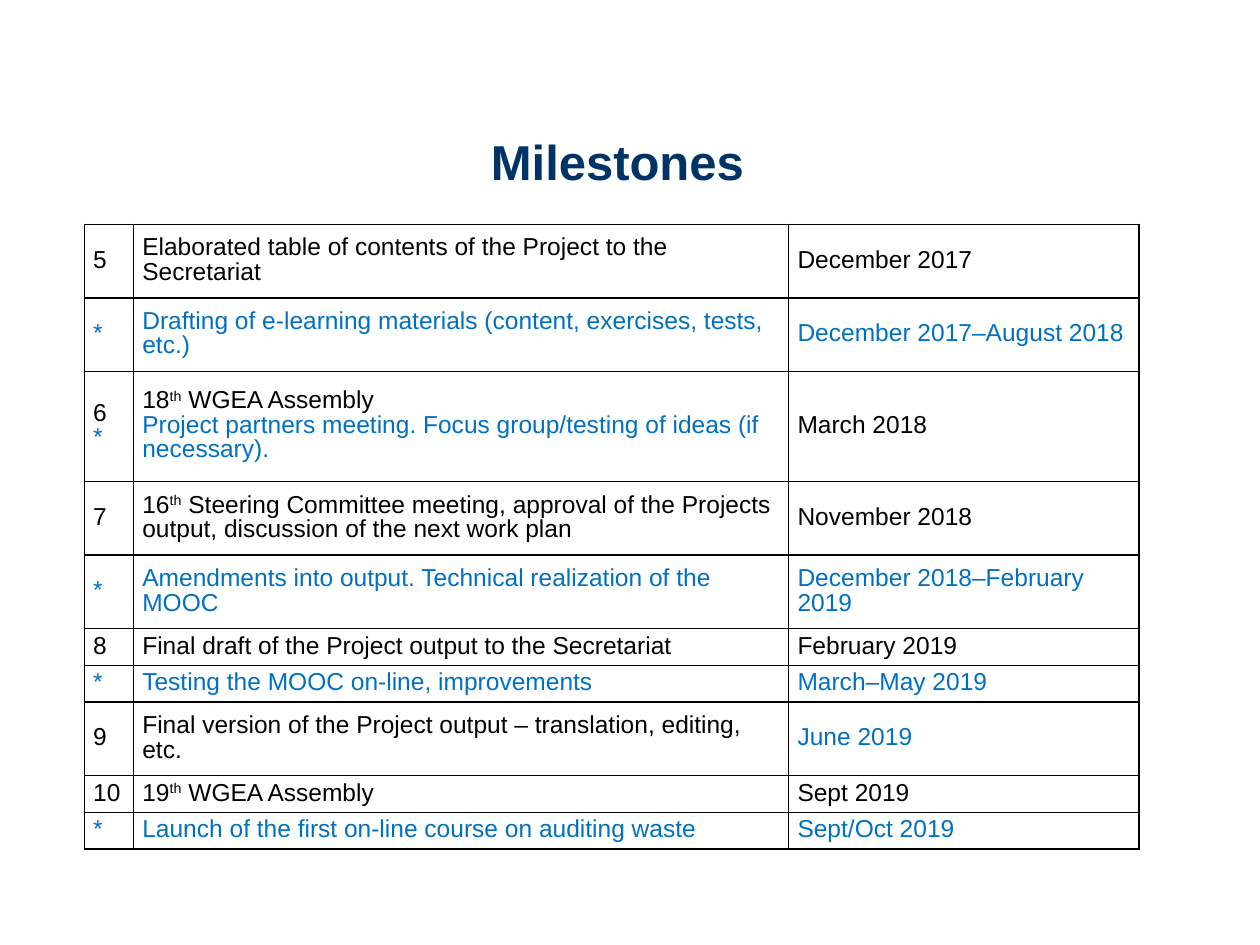
import pptx
import pptx.dml.color
import pptx.enum.text
import pptx.oxml
import pptx.oxml.ns
import pptx.util

FONT = "Arial"
NAVY, BLACK, BLUE = "003366", "000000", "0070C0"
COLUMN_WIDTHS = [0.39, 5.2, 2.78]
GRID_LEFT, GRID_TOP, GRID_HEIGHT = 0.67, 1.78, 4.96


def plan(text, *more):
    return [(BLACK, text, *more)]


def mooc(text):
    return [(BLUE, text)]


MILESTONES = [
    (2, plan("5"), plan("Elaborated table of contents of the Project to the Secretariat"),
     plan("December 2017")),
    (2, mooc("*"), mooc("Drafting of e-learning materials (content, exercises, tests, etc.)"),
     mooc("December 2017–August 2018")),
    (3, plan("6") + mooc("*"),
     plan("18", "th", " WGEA Assembly")
     + mooc("Project partners meeting. Focus group/testing of ideas (if necessary)."),
     plan("March 2018")),
    (2, plan("7"),
     plan("16", "th", " Steering Committee meeting, approval of the Projects output, "
          "discussion of the next work plan"),
     plan("November 2018")),
    (2, mooc("*"), mooc("Amendments into output. Technical realization of the MOOC"),
     mooc("December 2018–February 2019")),
    (1, plan("8"), plan("Final draft of the Project output to the Secretariat"),
     plan("February 2019")),
    (1, mooc("*"), mooc("Testing the MOOC on-line, improvements"), mooc("March–May 2019")),
    (2, plan("9"), plan("Final version of the Project output – translation, editing, etc."),
     mooc("June 2019")),
    (1, plan("10"), plan("19", "th", " WGEA Assembly"), plan("Sept 2019")),
    (1, mooc("*"), mooc("Launch of the first on-line course on auditing waste"),
     mooc("Sept/Oct 2019")),
]


def rgb(color):
    return pptx.dml.color.RGBColor.from_string(color)


def add_run(paragraph, text, size, color, bold=False):
    run = paragraph.add_run()
    run.text = text
    run.font.name = FONT
    run.font.size = pptx.util.Pt(size)
    run.font.bold = bold
    run.font.color.rgb = rgb(color)
    return run


def add_heading(slide, text):
    heading = slide.shapes.title
    heading.left, heading.top, heading.width, heading.height = (
        pptx.util.Inches(length) for length in (0.65, 0.92, 8.5, 0.71))
    heading.text_frame.vertical_anchor = pptx.enum.text.MSO_ANCHOR.MIDDLE
    paragraph = heading.text_frame.paragraphs[0]
    paragraph.alignment = pptx.enum.text.PP_ALIGN.CENTER
    add_run(paragraph, text, 28, NAVY, bold=True)


def border_cell(cell):
    properties = cell._tc.get_or_add_tcPr()
    for position, side in enumerate(("lnL", "lnR", "lnT", "lnB")):
        properties.insert(position, pptx.oxml.parse_xml(
            f'<a:{side} {pptx.oxml.ns.nsdecls("a")} w="{pptx.util.Pt(1)}">'
            f'<a:solidFill><a:srgbClr val="{BLACK}"/></a:solidFill></a:{side}>'))


def fill_cell(cell, lines):
    cell.fill.background()
    cell.vertical_anchor = pptx.enum.text.MSO_ANCHOR.MIDDLE
    cell.margin_left = cell.margin_right = pptx.util.Inches(0.07)
    cell.margin_top = cell.margin_bottom = 0
    border_cell(cell)
    for number, (color, *parts) in enumerate(lines):
        frame = cell.text_frame
        paragraph = frame.add_paragraph() if number else frame.paragraphs[0]
        paragraph.line_spacing = pptx.util.Pt(14)
        for part in parts:
            run = add_run(paragraph, part, 14, color)
            if part == "th":
                run.font._element.set("baseline", "30000")


def add_schedule(slide, milestones):
    unit = GRID_HEIGHT / sum(milestone[0] for milestone in milestones)
    schedule = slide.shapes.add_table(
        len(milestones), len(COLUMN_WIDTHS),
        pptx.util.Inches(GRID_LEFT), pptx.util.Inches(GRID_TOP),
        pptx.util.Inches(sum(COLUMN_WIDTHS)), pptx.util.Inches(GRID_HEIGHT)).table
    schedule.first_row = schedule.horz_banding = False
    for column, width in zip(schedule.columns, COLUMN_WIDTHS):
        column.width = pptx.util.Inches(width)
    for row, (units, *entries) in zip(schedule.rows, milestones):
        row.height = pptx.util.Inches(units * unit)
        for cell, lines in zip(row.cells, entries):
            fill_cell(cell, lines)


def main():
    deck = pptx.Presentation()
    deck.slide_width = pptx.util.Inches(10)
    deck.slide_height = pptx.util.Inches(7.5)
    slide = deck.slides.add_slide(deck.slide_layouts.get_by_name("Title Only"))
    add_heading(slide, "Milestones")
    add_schedule(slide, MILESTONES)
    deck.save("out.pptx")


if __name__ == "__main__":
    main()
